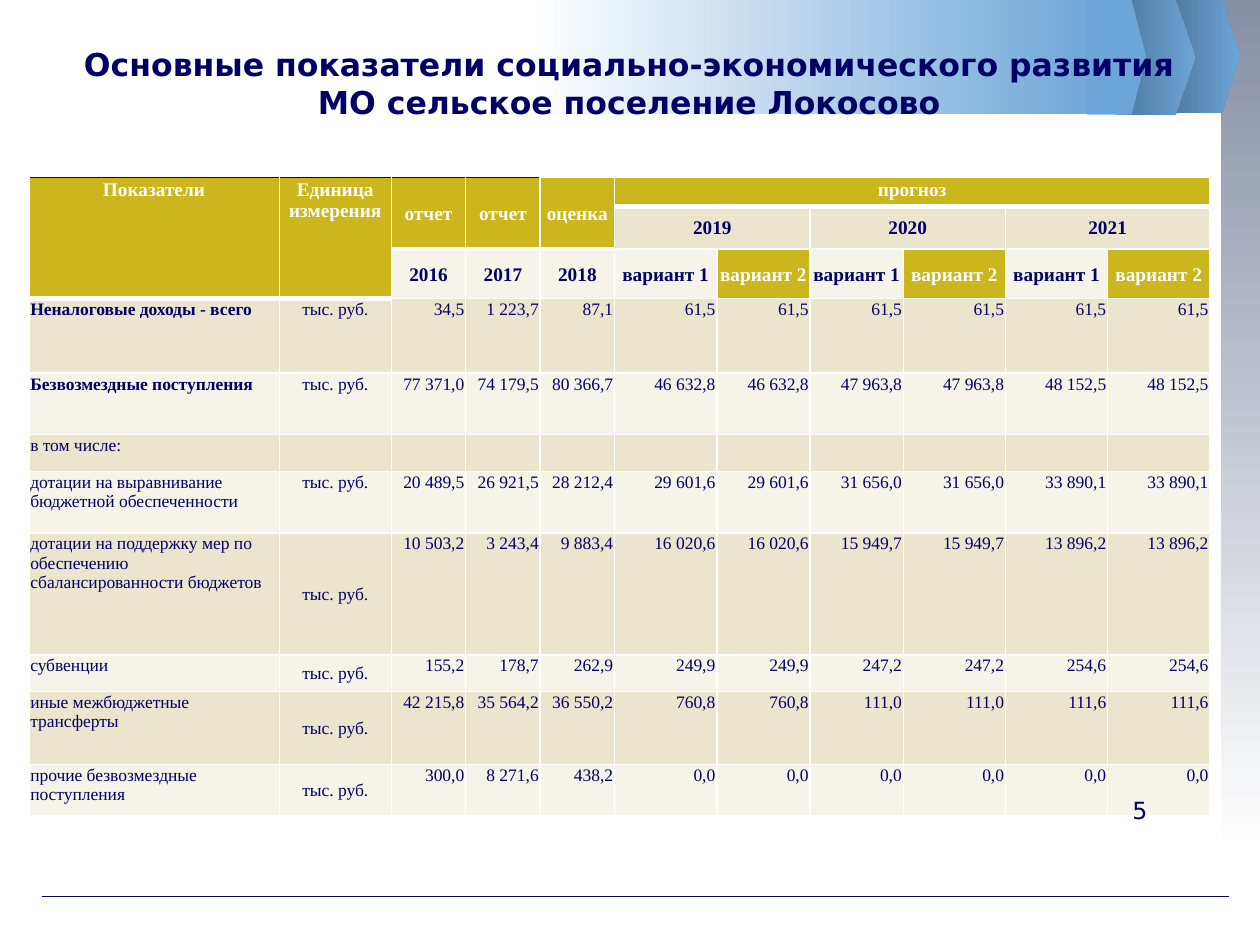
"""Build the slide with the main indicators of the settlement's development."""
from lxml.etree import SubElement
from pptx import Presentation
from pptx.dml.color import RGBColor as RGB
from pptx.enum.shapes import MSO_CONNECTOR as LINK, MSO_SHAPE as SHAPE
from pptx.enum.text import MSO_ANCHOR as ANCHOR, MSO_AUTO_SIZE as AUTO, PP_ALIGN as ALIGN
from pptx.oxml.ns import qn
from pptx.util import Cm, Pt

NAVY = RGB(0x00, 0x00, 0x66)
WHITE = RGB(0xFF, 0xFF, 0xFF)
GOLD = RGB(0xCB, 0xB6, 0x1D)
SAND = RGB(0xEC, 0xE5, 0xCD)
CREAM = RGB(0xF6, 0xF3, 0xE8)
SLATE = RGB(0x87, 0x8F, 0xA5)
STEEL = RGB(0x4D, 0x76, 0x9B)
SKY = RGB(0x6C, 0xA5, 0xD8)
SANS, SERIF = "DejaVu Sans", "Times New Roman"


def style(part, name, size, color, bold=False):
    for run in part.runs:
        font = run.font
        font.name, font.size, font.bold = name, Pt(size), bold
        font.color.rgb = color


def edge(cell, lines):
    props = cell._tc.get_or_add_tcPr()
    for spot, (side, color, width) in enumerate(lines):
        line = SubElement(props, qn(f"a:ln{side}"), w=str(Pt(width)))
        fill = SubElement(line, qn("a:solidFill"))
        SubElement(fill, qn("a:srgbClr"), val=str(color))
        props.insert(spot, line)


deck = Presentation()
deck.slide_width, deck.slide_height = Cm(25.4), Cm(19.05)
slide = deck.slides.add_slide(deck.slide_layouts[5])
shapes = slide.shapes

rule = shapes.add_connector(LINK.STRAIGHT, Cm(0.84), Cm(18.08), Cm(24.77), Cm(18.08))
rule.line.color.rgb = NAVY
rule.line.width = Pt(0.75)
SubElement(rule._element.spPr, qn("a:effectLst"))

decor = [
    (SHAPE.RECTANGLE, 24.61, 0, 0.79, 17.2, SLATE, WHITE, 270),
    (SHAPE.PENTAGON, 23.5, -0.03, 1.5, 2.31, STEEL, SKY, 0),
    (SHAPE.PENTAGON, 22.5, 0, 1.6, 2.31, STEEL, SKY, 0),
    (SHAPE.RECTANGLE, 10.69, 0, 11.68, 2.31, WHITE, SKY, 0),
    (SHAPE.PENTAGON, 21.92, 0, 1.19, 2.31, SKY, SKY, 0),
]
for kind, left, top, width, height, start, end, angle in decor:
    item = shapes.add_shape(kind, Cm(left), Cm(top), Cm(width), Cm(height))
    item.shadow.inherit = False
    item.line.fill.background()
    if kind == SHAPE.PENTAGON:
        item.adjustments[0] = 0.25
    if start == end:
        item.fill.solid()
        item.fill.fore_color.rgb = start
    else:
        item.fill.gradient()
        item.fill.gradient_angle = angle
        for stop, color in zip(item.fill.gradient_stops, (start, end)):
            stop.color.rgb = color

title = shapes.title
shapes._spTree.append(title._element)
title.left, title.top, title.width, title.height = Cm(0.58), Cm(0.58), Cm(24.21), Cm(2.18)
frame = title.text_frame
frame.text = "Основные показатели социально-экономического развития\vМО сельское поселение Локосово"
frame.word_wrap, frame.auto_size = True, AUTO.NONE
frame.vertical_anchor = ANCHOR.MIDDLE
frame.paragraphs[0].alignment = ALIGN.CENTER
style(frame.paragraphs[0], SANS, 18, NAVY, True)

widths = [5.05, 2.26, 1.5, 1.5, 1.5, 2.06, 1.88, 1.88, 2.06, 2.06, 2.06]
heights = [0.58, 0.86, 1, 1.5, 1.24, 0.74, 1.24, 2.46, 0.74, 1.47, 1.04]
heads = [
    (0, 0, 3, 1, "Показатели"),
    (0, 1, 3, 1, "Единица измерения"),
    (0, 2, 2, 1, "отчет"),
    (0, 3, 2, 1, "отчет"),
    (0, 4, 2, 1, "оценка"),
    (0, 5, 1, 6, "прогноз"),
]
heads += [(1, 5 + 2 * n, 1, 2, str(2019 + n)) for n in range(3)]
heads += [(2, 2 + n, 1, 1, str(2016 + n)) for n in range(3)]
heads += [(2, 5 + n, 1, 1, f"вариант {n % 2 + 1}") for n in range(6)]
facts = [
    ("Неналоговые доходы - всего", ["34,5", "1 223,7", "87,1"], ["61,5", "61,5", "61,5"]),
    ("Безвозмездные поступления", ["77 371,0", "74 179,5", "80 366,7"],
     ["46 632,8", "47 963,8", "48 152,5"]),
    ("в том числе:", [], []),
    ("дотации на выравнивание бюджетной обеспеченности",
     ["20 489,5", "26 921,5", "28 212,4"], ["29 601,6", "31 656,0", "33 890,1"]),
    ("дотации на поддержку мер по обеспечению сбалансированности бюджетов",
     ["10 503,2", "3 243,4", "9 883,4"], ["16 020,6", "15 949,7", "13 896,2"]),
    ("субвенции", ["155,2", "178,7", "262,9"], ["249,9", "247,2", "254,6"]),
    ("иные межбюджетные трансферты",
     ["42 215,8", "35 564,2", "36 550,2"], ["760,8", "111,0", "111,6"]),
    ("прочие безвозмездные поступления",
     ["300,0", "8 271,6", "438,2"], ["0,0", "0,0", "0,0"]),
]

holder = shapes.add_table(len(heights), len(widths), Cm(0.58), Cm(3.58),
                          Cm(sum(widths)), Cm(sum(heights)))
table = holder.table
table.first_row = table.horz_banding = False
for col, width in zip(table.columns, widths):
    col.width = Cm(width)
for row, height in zip(table.rows, heights):
    row.height = Cm(height)

for top, left, down, across, text in heads:
    first = table.cell(top, left)
    first.text = text
    gold = top == 0 or text == "вариант 2"
    middle = top > 0 or down == 2
    first.vertical_anchor = ANCHOR.MIDDLE if middle else ANCHOR.TOP
    first.text_frame.paragraphs[0].alignment = ALIGN.CENTER
    style(first.text_frame.paragraphs[0], SERIF, 11, WHITE if gold else NAVY, True)
    if down * across > 1:
        first.merge(table.cell(top + down - 1, left + across - 1))
    for r in range(top, top + down):
        for c in range(left, left + across):
            cell = table.cell(r, c)
            cell.fill.solid()
            cell.fill.fore_color.rgb = GOLD if gold else SAND if top == 1 else CREAM
            edge(cell, [("L", WHITE, 1), ("R", WHITE, 1),
                        ("T", NAVY if top == 0 and left < 4 else WHITE, 1),
                        ("B", WHITE, 3 if top == 0 else 1)])

for r, (name, past, plan) in enumerate(facts, 3):
    unit = "тыс. руб." if past else ""
    texts = [name, unit, *past, *(value for value in plan for _ in range(2))]
    for c in range(len(widths)):
        cell = table.cell(r, c)
        cell.text = texts[c] if c < len(texts) else ""
        cell.fill.solid()
        cell.fill.fore_color.rgb = SAND if r % 2 else CREAM
        cell.vertical_anchor = ANCHOR.MIDDLE if c == 1 and r > 6 else ANCHOR.TOP
        para = cell.text_frame.paragraphs[0]
        para.alignment = (ALIGN.LEFT, ALIGN.CENTER, ALIGN.RIGHT)[min(c, 2)]
        style(para, SERIF, 10, NAVY, c == 0 and r < 5)
        edge(cell, [(side, WHITE, 1) for side in "LRTB"])

for cell in table.iter_cells():
    cell.margin_left = cell.margin_right = cell.margin_top = Cm(0.03)
    cell.margin_bottom = 0
    para = cell.text_frame.paragraphs[0]
    if not para.runs:
        SubElement(para._p, qn("a:endParaRPr"), sz="1000")

page = shapes.add_textbox(Cm(22.58), Cm(15.93), Cm(1.7), Cm(1.45))
page.text_frame.word_wrap = True
page.text_frame.text = "5"
style(page.text_frame.paragraphs[0], SANS, 13.5, NAVY)

deck.save("out.pptx")
